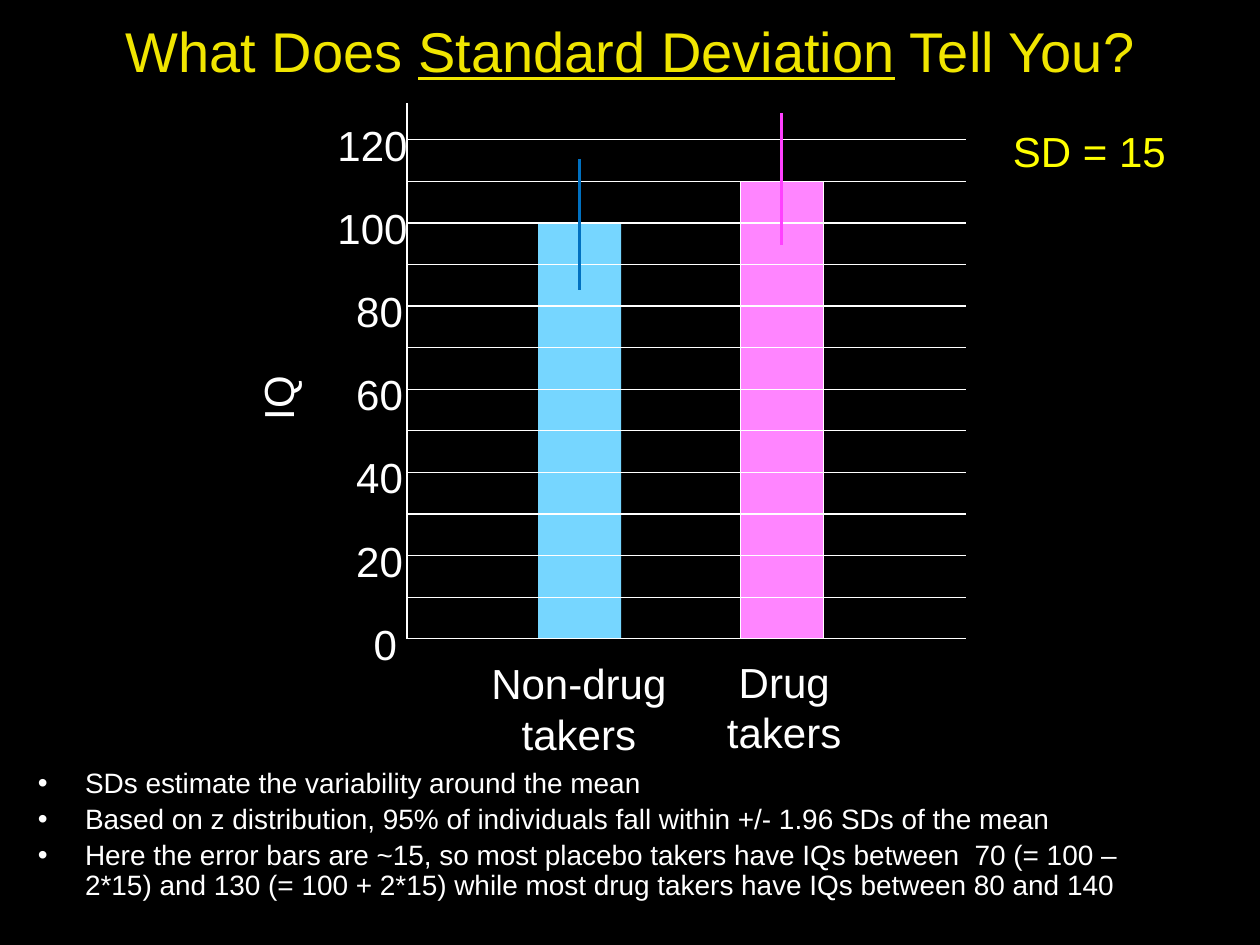
from dataclasses import dataclass

from lxml.etree import SubElement
from pptx import Presentation
from pptx.dml.color import RGBColor
from pptx.enum.shapes import MSO_CONNECTOR, MSO_SHAPE
from pptx.enum.text import MSO_ANCHOR, MSO_AUTO_SIZE, PP_ALIGN
from pptx.oxml.ns import qn
from pptx.util import Pt

FONT = "Arial"
WHITE = "FFFFFF"
TITLE_YELLOW = "F0E500"
NOTE_YELLOW = "FFFF00"

AXIS_LEFT, AXIS_RIGHT = 232.5, 552.25
AXIS_TOP, BASELINE = 59, 365
POINTS_PER_IQ = 2.376
BAR_WIDTH = 47.5
ERROR_BAR_HEIGHT = 75
LABEL_HEIGHT = 36


@dataclass(frozen=True)
class Box:
    left: float
    top: float
    width: float
    height: float


@dataclass(frozen=True)
class Group:
    label: str
    label_box: Box
    mean: int
    bar_left: float
    fill: str
    outline: str | None
    error_x: float
    error_top: float
    error_color: str


GROUPS = [
    Group("Non-drug takers", Box(263.5, 372.25, 134.5, 65.5), 100,
          307.5, "76D6FF", None, 331.25, 90.75, "0070C0"),
    Group("Drug takers", Box(388, 371.5, 120.25, 65.5), 110,
          423.25, "FF85FF", WHITE, 446.5, 64.8, "FF40FF"),
]

# Left edge and width of an axis label, by its number of digits
LABEL_SPANS = {1: (206.5, 28), 2: (196.5, 41), 3: (185.75, 54.75)}

TITLE_RUNS = [("What Does ", False), ("Standard Deviation", True), (" Tell You?", False)]

POINTS = [
    "SDs estimate the variability around the mean",
    "Based on z distribution, 95% of individuals fall within +/- 1.96 SDs of the mean",
    "Here the error bars are ~15, so most placebo takers have IQs between  70 "
    "(= 100 – 2*15) and 130 (= 100 + 2*15) while most drug takers have IQs "
    "between 80 and 140",
]


def rgb(color: str) -> RGBColor:
    return RGBColor.from_string(color)


def iq_y(iq: float) -> float:
    """Vertical position of an IQ value on the chart."""
    return BASELINE - iq * POINTS_PER_IQ


def place(shape, box: Box) -> None:
    shape.left, shape.top = Pt(box.left), Pt(box.top)
    shape.width, shape.height = Pt(box.width), Pt(box.height)


def add_run(paragraph, text: str, size: float, color: str, underline: bool = False) -> None:
    run = paragraph.add_run()
    run.text = text
    run.font.name = FONT
    run.font.size = Pt(size)
    run.font.color.rgb = rgb(color)
    run.font.underline = underline


def add_label(slide, text: str, box: Box, color: str = WHITE,
              align: PP_ALIGN = PP_ALIGN.LEFT, wrap: bool = True, rotation: float = 0) -> None:
    label = slide.shapes.add_textbox(Pt(box.left), Pt(box.top), Pt(box.width), Pt(box.height))
    label.rotation = rotation
    frame = label.text_frame
    frame.word_wrap = wrap
    frame.auto_size = MSO_AUTO_SIZE.SHAPE_TO_FIT_TEXT
    frame.paragraphs[0].alignment = align
    add_run(frame.paragraphs[0], text, 24, color)


def add_line(slide, x1: float, y1: float, x2: float, y2: float,
             color: str = WHITE, width: float = 0.75) -> None:
    line = slide.shapes.add_connector(MSO_CONNECTOR.STRAIGHT, Pt(x1), Pt(y1), Pt(x2), Pt(y2))
    line.line.color.rgb = rgb(color)
    line.line.width = Pt(width)
    SubElement(line._element.spPr, qn("a:effectLst"))


def add_bar(slide, group: Group) -> None:
    top = iq_y(group.mean)
    bar = slide.shapes.add_shape(MSO_SHAPE.RECTANGLE, Pt(group.bar_left), Pt(top),
                                 Pt(BAR_WIDTH), Pt(BASELINE - top))
    bar.shadow.inherit = False
    bar.fill.solid()
    bar.fill.fore_color.rgb = rgb(group.fill)
    if group.outline:
        bar.line.color.rgb = rgb(group.outline)
        bar.line.width = Pt(0.75)
    else:
        bar.line.fill.background()


def add_iq_chart(slide) -> None:
    add_label(slide, "IQ", Box(80, 209.5, 157, LABEL_HEIGHT),
              align=PP_ALIGN.CENTER, rotation=270)
    add_line(slide, AXIS_LEFT, AXIS_TOP, AXIS_LEFT, BASELINE)
    for group in GROUPS:
        add_bar(slide, group)
    for iq in range(0, 121, 10):
        add_line(slide, AXIS_LEFT, iq_y(iq), AXIS_RIGHT, iq_y(iq))
    for iq in range(0, 121, 20):
        left, width = LABEL_SPANS[len(str(iq))]
        add_label(slide, str(iq), Box(left, iq_y(iq) - 15.25, width, LABEL_HEIGHT), wrap=False)
    for group in GROUPS:
        add_label(slide, group.label, group.label_box, align=PP_ALIGN.CENTER)
        add_line(slide, group.error_x, group.error_top,
                 group.error_x, group.error_top + ERROR_BAR_HEIGHT, group.error_color, 2)


def fill_title(title) -> None:
    place(title, Box(18, 5.75, 684, 45.25))
    frame = title.text_frame
    frame.auto_size = MSO_AUTO_SIZE.SHAPE_TO_FIT_TEXT
    frame.vertical_anchor = MSO_ANCHOR.MIDDLE
    heading = frame.paragraphs[0]
    heading.alignment = PP_ALIGN.CENTER
    for text, underline in TITLE_RUNS:
        add_run(heading, text, 32, TITLE_YELLOW, underline)


def fill_points(body) -> None:
    place(body, Box(14.4, 436.3, 660.25, 85))
    frame = body.text_frame
    frame.auto_size = MSO_AUTO_SIZE.SHAPE_TO_FIT_TEXT
    for index, text in enumerate(POINTS):
        point = frame.paragraphs[0] if index == 0 else frame.add_paragraph()
        point.line_spacing = 0.9
        point.space_before = Pt(3.2)
        properties = point._p.get_or_add_pPr()
        properties.set("marL", str(Pt(27)))
        properties.set("indent", str(Pt(-27)))
        SubElement(properties, qn("a:buChar"), char="•")
        add_run(point, text, 16, WHITE)


def main() -> None:
    presentation = Presentation()
    presentation.slide_width, presentation.slide_height = Pt(720), Pt(540)
    slide = presentation.slides.add_slide(presentation.slide_layouts[1])
    slide.background.fill.solid()
    slide.background.fill.fore_color.rgb = rgb("000000")

    fill_title(slide.shapes.title)
    add_iq_chart(slide)
    fill_points(slide.placeholders[1])
    add_label(slide, "SD = 15", Box(571.75, 68.4, 157, LABEL_HEIGHT), NOTE_YELLOW)
    presentation.save("out.pptx")


if __name__ == "__main__":
    main()
